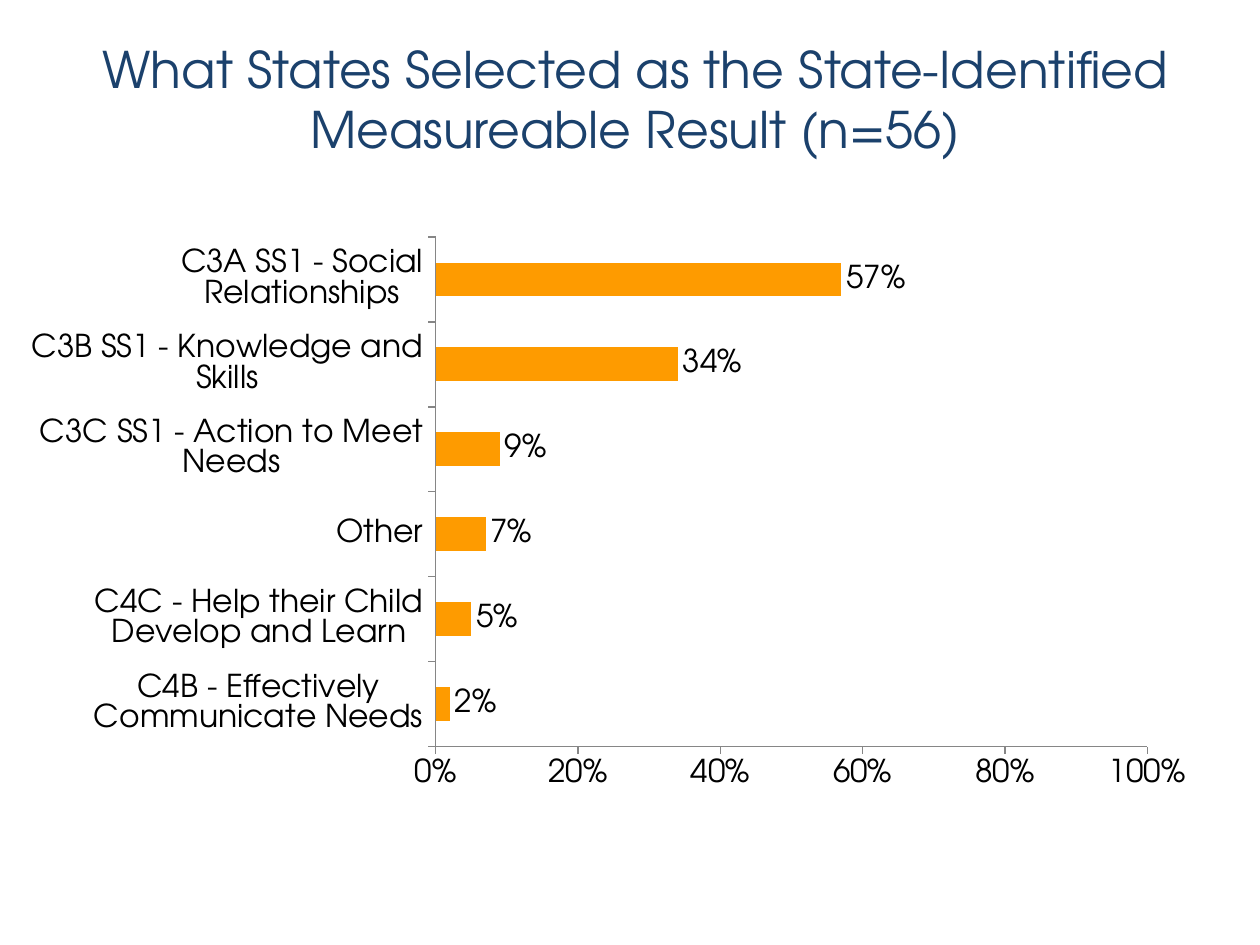
import pptx
import pptx.chart.data
import pptx.dml.color
import pptx.enum.chart
import pptx.enum.text
import pptx.oxml
import pptx.oxml.ns
import pptx.util

Pt = pptx.util.Pt
FONT = "TeX Gyre Adventor"
COLORS = {"title": "1B416C", "bar": "FE9B00", "text": "000000", "axis": "868686"}
RESULTS = [
    ("C4B - Effectively Communicate Needs", 0.02),
    ("C4C - Help their Child Develop and Learn", 0.05),
    ("Other", 0.07),
    ("C3C SS1 - Action to Meet Needs", 0.09),
    ("C3B SS1 - Knowledge and Skills", 0.34),
    ("C3A SS1 - Social Relationships", 0.57),
]
PLOT = {"x": 0.334, "y": 0.147, "w": 0.59, "h": 0.674}


def rgb(name):
    return pptx.dml.color.RGBColor.from_string(COLORS[name])


def set_all(obj, values):
    for name, value in values.items():
        setattr(obj, name, value)


def set_font(font, size, color):
    set_all(font, {"name": FONT, "size": Pt(size), "bold": False})
    font.color.rgb = rgb(color)


def add_title(s, text, left, top, width, height):
    tf = s.shapes.add_textbox(Pt(left), Pt(top), Pt(width), Pt(height)).text_frame
    set_all(tf, {"word_wrap": True, "vertical_anchor": pptx.enum.text.MSO_ANCHOR.TOP})
    p = tf.paragraphs[0]
    p.alignment = pptx.enum.text.PP_ALIGN.CENTER
    r = p.add_run()
    r.text = text
    set_font(r.font, 28.8, "title")


def place_plot(chart):
    """Fix the inner plot area as fractions of the chart."""
    plot_area = chart._chartSpace.chart.plotArea
    for old in plot_area.findall(pptx.oxml.ns.qn("c:layout")):
        plot_area.remove(old)
    modes = "".join(f'<c:{k}Mode val="edge"/>' for k in "xy")
    sizes = "".join(f'<c:{k} val="{v}"/>' for k, v in PLOT.items())
    plot_area.insert(0, pptx.oxml.parse_xml(
        f'<c:layout {pptx.oxml.ns.nsdecls("c")}><c:manualLayout>'
        f'<c:layoutTarget val="inner"/>{modes}{sizes}</c:manualLayout></c:layout>'))


def format_axis(axis):
    set_all(axis, {"has_major_gridlines": False,
                   "major_tick_mark": pptx.enum.chart.XL_TICK_MARK.OUTSIDE,
                   "minor_tick_mark": pptx.enum.chart.XL_TICK_MARK.NONE})
    axis.format.line.color.rgb = rgb("axis")
    axis.format.line.width = Pt(0.75)


def add_bar_chart(s, left, top, width, height):
    data = pptx.chart.data.CategoryChartData(number_format="0%")
    names, values = zip(*RESULTS)
    data.categories = names
    data.add_series("Series 1", values)
    chart = s.shapes.add_chart(pptx.enum.chart.XL_CHART_TYPE.BAR_CLUSTERED,
                               Pt(left), Pt(top), Pt(width), Pt(height), data).chart
    set_all(chart, {"has_legend": False, "has_title": False})
    set_font(chart.font, 18, "text")
    place_plot(chart)

    # Axes
    for axis in (chart.category_axis, chart.value_axis):
        format_axis(axis)
    set_all(chart.value_axis, {"minimum_scale": 0, "maximum_scale": 1, "major_unit": 0.2})
    set_all(chart.value_axis.tick_labels, {"number_format": "0%",
                                           "number_format_is_linked": False})

    # Bars and their labels
    plot = chart.plots[0]
    set_all(plot, {"gap_width": 150, "vary_by_categories": False, "has_data_labels": True})
    set_all(plot.data_labels, {"show_value": True, "number_format": "0%",
                               "number_format_is_linked": False,
                               "position": pptx.enum.chart.XL_LABEL_POSITION.OUTSIDE_END})
    fill = plot.series[0].format.fill
    fill.solid()
    fill.fore_color.rgb = rgb("bar")


def main():
    prs = pptx.Presentation()
    set_all(prs, {"slide_width": Pt(720), "slide_height": Pt(540)})
    s = prs.slides.add_slide(prs.slide_layouts[6])
    add_title(s, "What States Selected as the State-Identified Measureable Result (n=56)",
              18, 18, 690, 60)
    add_bar_chart(s, 18, 72, 690, 432)
    prs.save("out.pptx")


if __name__ == "__main__":
    main()
